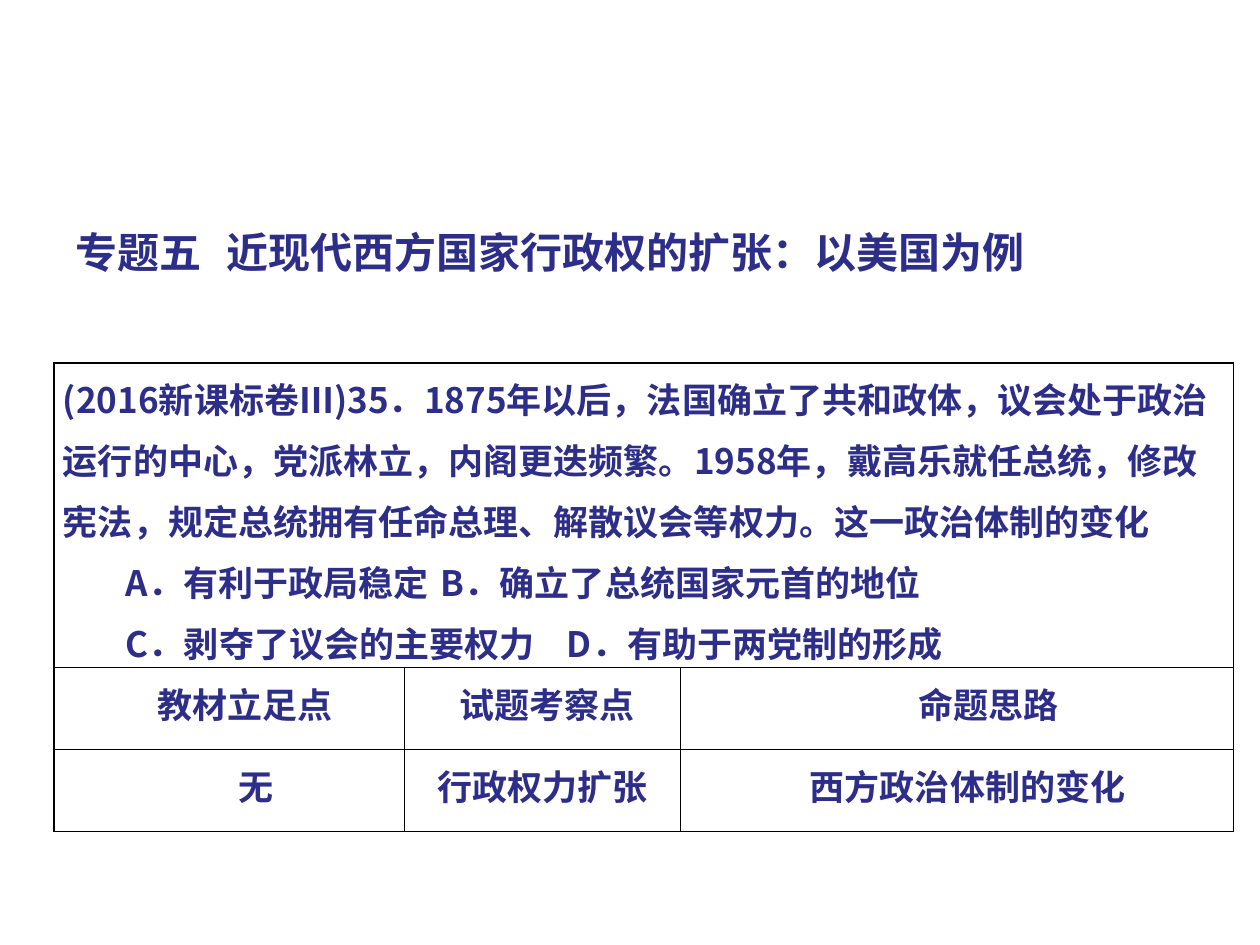
from lxml.etree import SubElement
from pptx import Presentation
from pptx.dml.color import RGBColor
from pptx.enum.text import PP_ALIGN
from pptx.oxml.ns import qn
from pptx.util import Inches, Pt

FONT = "Noto Sans CJK SC"
BLUE = "2D2D8A"
BLACK = "000000"


def rgb(value):
    return RGBColor.from_string(value)


def add_text(p, text, size, indent=0, tab=None):
    pPr = p._p.get_or_add_pPr()
    pPr.set("marL", "0")
    pPr.set("indent", str(Inches(indent)))
    SubElement(pPr, qn("a:buNone"))
    if tab:
        tabs = SubElement(pPr, qn("a:tabLst"))
        SubElement(tabs, qn("a:tab"), pos=str(Inches(tab)), algn="l")
    r = p.add_run()
    r.text = text
    r.font.size = Pt(size)
    r.font.bold = True
    r.font.color.rgb = rgb(BLUE)
    r.font.name = FONT
    SubElement(r._r.get_or_add_rPr(), qn("a:ea"), typeface=FONT)


prs = Presentation()
prs.slide_width, prs.slide_height = Inches(10), Inches(7.5)
s = prs.slides.add_slide(prs.slide_layouts[1])
title = s.shapes.title
title._element.getparent().remove(title._element)

body = s.placeholders[1]
body.left, body.top = Inches(0.2), Inches(1.75)
body.width, body.height = Inches(9.69), Inches(1.06)
add_text(body.text_frame.paragraphs[0],
         "专题五\t近现代西方国家行政权的扩张：以美国为例", 24, 0.3, 1.6)

widths = [2.78, 2.19, 4.39]
heights = [2.18, 0.65, 0.65]
frame = s.shapes.add_table(3, 3, Inches(0.43), Inches(2.88),
                           Inches(sum(widths)), Inches(sum(heights)))
table = frame.table
table.first_row = table.horz_banding = False
for col, width in zip(table.columns, widths):
    col.width = Inches(width)
for row, height in zip(table.rows, heights):
    row.height = Inches(height)

for cell in table.iter_cells():
    cell.margin_left = cell.margin_right = Inches(0.07)
    cell.margin_top = cell.margin_bottom = 0
    tcPr = cell._tc.get_or_add_tcPr()
    for side in ("L", "R", "T", "B"):
        ln = SubElement(tcPr, qn(f"a:ln{side}"), w=str(Pt(1)))
        fill = SubElement(ln, qn("a:solidFill"))
        SubElement(fill, qn("a:srgbClr"), val=BLACK)
    cell.fill.background()

question = table.cell(0, 0)
question.merge(table.cell(0, 2))
lines = [
    ("(2016新课标卷Ⅲ)35．1875年以后，法国确立了共和政体，议会处于政治运行的中心，"
     "党派林立，内阁更迭频繁。1958年，戴高乐就任总统，修改宪法，"
     "规定总统拥有任命总理、解散议会等权力。这一政治体制的变化", 0, None),
    ("A．有利于政局稳定\tB．确立了总统国家元首的地位", 0.5, 4.47),
    ("C．剥夺了议会的主要权力\tD．有助于两党制的形成", 0.5, 4.62),
]
tf = question.text_frame
for i, (text, indent, tab) in enumerate(lines):
    p = tf.add_paragraph() if i else tf.paragraphs[0]
    p.line_spacing = 1.2
    add_text(p, text, 20, indent, tab)

analysis = [
    [("教材立足点", 0.25), ("试题考察点", 0.08), ("命题思路", 0.5)],
    [("无", 0.42), ("行政权力扩张", 0), ("西方政治体制的变化", 0.17)],
]
for i, entries in enumerate(analysis, 1):
    for j, (text, indent) in enumerate(entries):
        p = table.cell(i, j).text_frame.paragraphs[0]
        p.alignment = PP_ALIGN.CENTER
        p.line_spacing = 1.2
        add_text(p, text, 20, indent)

prs.save("out.pptx")
